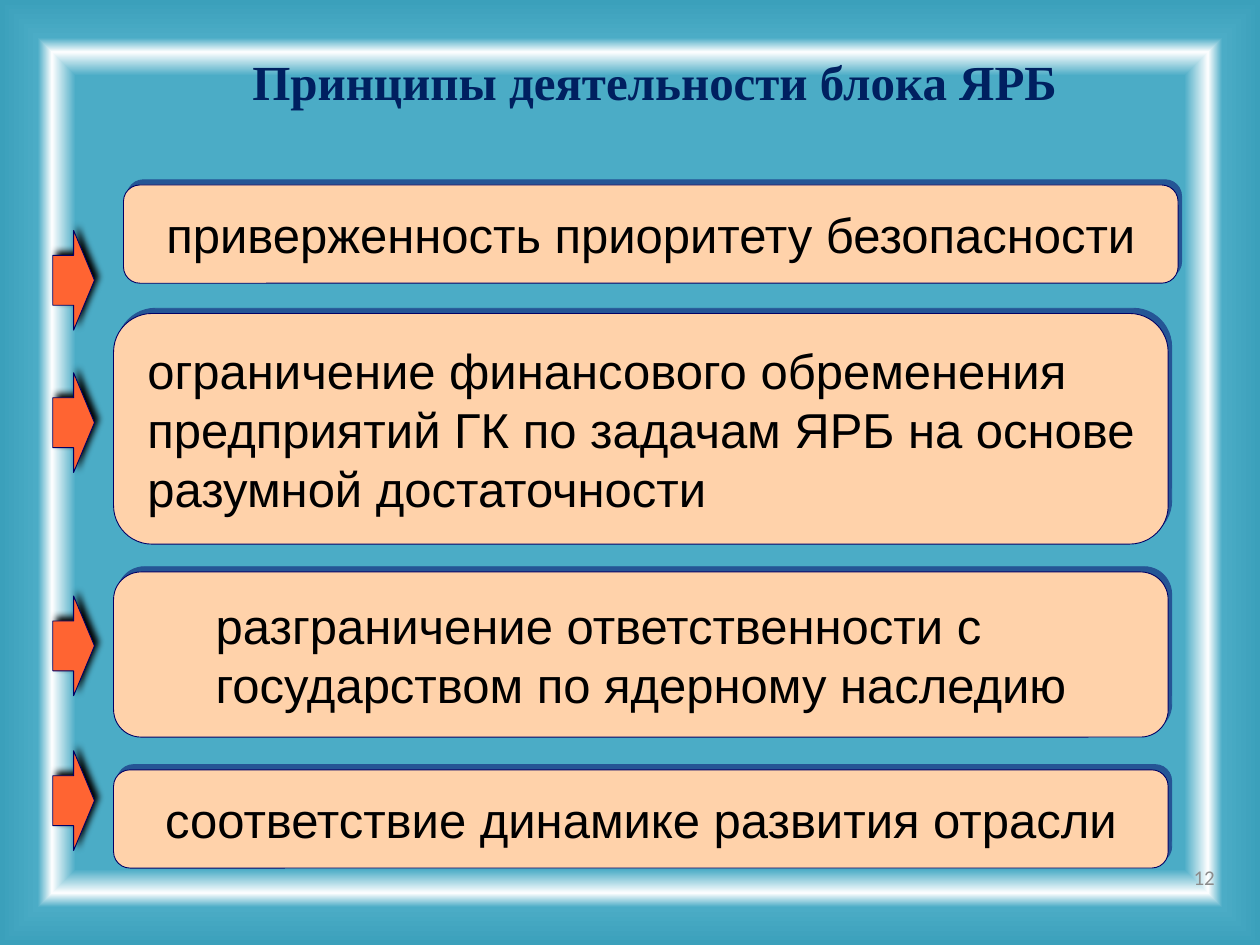
import pptx
import pptx.dml.color
import pptx.enum.shapes
import pptx.enum.text
import pptx.oxml
import pptx.oxml.ns
import pptx.util
from pptx.util import Cm

NAMESPACE = pptx.oxml.ns.nsdecls("a")
SHAPES = pptx.enum.shapes.MSO_SHAPE
ALIGN = pptx.enum.text.PP_ALIGN
MIDDLE = pptx.enum.text.MSO_ANCHOR.MIDDLE
GROW = pptx.enum.text.MSO_AUTO_SIZE.SHAPE_TO_FIT_TEXT


def color(value):
    return pptx.dml.color.RGBColor.from_string(value)


class SlideBuilder:
    box_fill = "FFD2AA"
    arrow_fill = "FF6432"
    outline = "000066"

    def __init__(self, slide):
        self.slide = slide

    def background(self, stops):
        self.slide.background.fill.gradient()
        gradient = self.slide.element.find(".//" + pptx.oxml.ns.qn("a:gradFill"))
        stop_list = "".join(
            f'<a:gs pos="{position * 1000}"><a:srgbClr val="{value}"/></a:gs>'
            for position, value in stops
        )
        gradient.getparent().replace(gradient, pptx.oxml.parse_xml(
            f'<a:gradFill {NAMESPACE} rotWithShape="1"><a:gsLst>{stop_list}</a:gsLst>'
            '<a:path path="shape"><a:fillToRect l="50000" t="50000" r="50000" b="50000"/>'
            '</a:path></a:gradFill>'
        ))

    def set_text(self, shape, text, size, font, value, align, bold=False):
        frame = shape.text_frame
        frame.text = text
        frame.word_wrap = True
        frame.vertical_anchor = MIDDLE
        paragraph = frame.paragraphs[0]
        paragraph.alignment = align
        run_font = paragraph.runs[0].font
        run_font.name = font
        run_font.size = pptx.util.Pt(size)
        run_font.bold = bold
        run_font.color.rgb = color(value)
        return frame

    def title(self, text, left, top, width, height):
        shape = self.slide.shapes.title
        shape.left, shape.top = Cm(left), Cm(top)
        shape.width, shape.height = Cm(width), Cm(height)
        frame = self.set_text(shape, text, 28, "Times New Roman", "002060", ALIGN.CENTER, True)
        frame.auto_size = GROW

    def page_number(self, text, left, top, width, height):
        shape = self.slide.shapes.add_textbox(Cm(left), Cm(top), Cm(width), Cm(height))
        self.set_text(shape, text, 12, "Calibri", "8C8C8C", ALIGN.RIGHT)

    def preset(self, kind, left, top, width, height, fill):
        shape = self.slide.shapes.add_shape(kind, Cm(left), Cm(top), Cm(width), Cm(height))
        shape.fill.solid()
        shape.fill.fore_color.rgb = color(fill)
        shape.line.color.rgb = color(self.outline)
        shape.line.width = pptx.util.Pt(0.5)
        return shape

    def shadow(self, shape, value, opacity, blur, distance, angle):
        shape.shadow.inherit = False
        effects = shape.element.spPr.find(pptx.oxml.ns.qn("a:effectLst"))
        effects.append(pptx.oxml.parse_xml(
            f'<a:outerShdw {NAMESPACE} blurRad="{pptx.util.Pt(blur)}" '
            f'dist="{pptx.util.Pt(distance)}" dir="{angle * 60000}" algn="ctr" rotWithShape="0">'
            f'<a:srgbClr val="{value}"><a:alpha val="{opacity * 1000}"/></a:srgbClr></a:outerShdw>'
        ))

    def arrow(self, left, top, width, height):
        shape = self.preset(SHAPES.DOWN_ARROW, left, top, width, height, self.arrow_fill)
        shape.rotation = 270
        self.shadow(shape, "000000", 100, 4, 3, 315)

    def principle(self, text, left, top, width, height):
        shape = self.preset(SHAPES.ROUNDED_RECTANGLE, left, top, width, height, self.box_fill)
        self.shadow(shape, self.outline, 50, 0, 3.6, 304)
        frame = self.set_text(shape, text, 28, "Arial", "000000", ALIGN.LEFT)
        frame.margin_left = frame.margin_right = Cm(0.3)
        frame.margin_top = frame.margin_bottom = Cm(0.3)
        frame.auto_size = GROW
        shape.element.txBody.bodyPr.set("anchorCtr", "1")


def main():
    presentation = pptx.Presentation()
    presentation.slide_width, presentation.slide_height = Cm(25.4), Cm(19.05)
    slide = presentation.slides.add_slide(presentation.slide_layouts[5])
    builder = SlideBuilder(slide)
    builder.background([(84, "4BACC6"), (89, "FFFFFF"), (92, "4BACC6"), (100, "3BA0BB")])
    builder.page_number("12", 18.82, 17.02, 5.92, 1.32)
    builder.title("Принципы деятельности блока ЯРБ", 2.49, 0.91, 21.41, 1.45)

    principles = [
        ("приверженность приоритету безопасности", 2.49, 3.73, 1.98, 5.23),
        ("ограничение финансового обременения предприятий ГК по задачам ЯРБ "
         "на основе разумной достаточности", 2.29, 6.32, 4.65, 8.1),
        ("разграничение ответственности с государством по ядерному наследию",
         2.29, 11.53, 3.33, 12.6),
        ("соответствие динамике развития отрасли", 2.29, 15.52, 1.98, 15.72),
    ]
    for text, left, top, height, arrow_top in principles:
        builder.arrow(0.48, arrow_top, 2.01, 0.84)
        builder.principle(text, left, top, 21.26, height)

    presentation.save("out.pptx")


if __name__ == "__main__":
    main()
